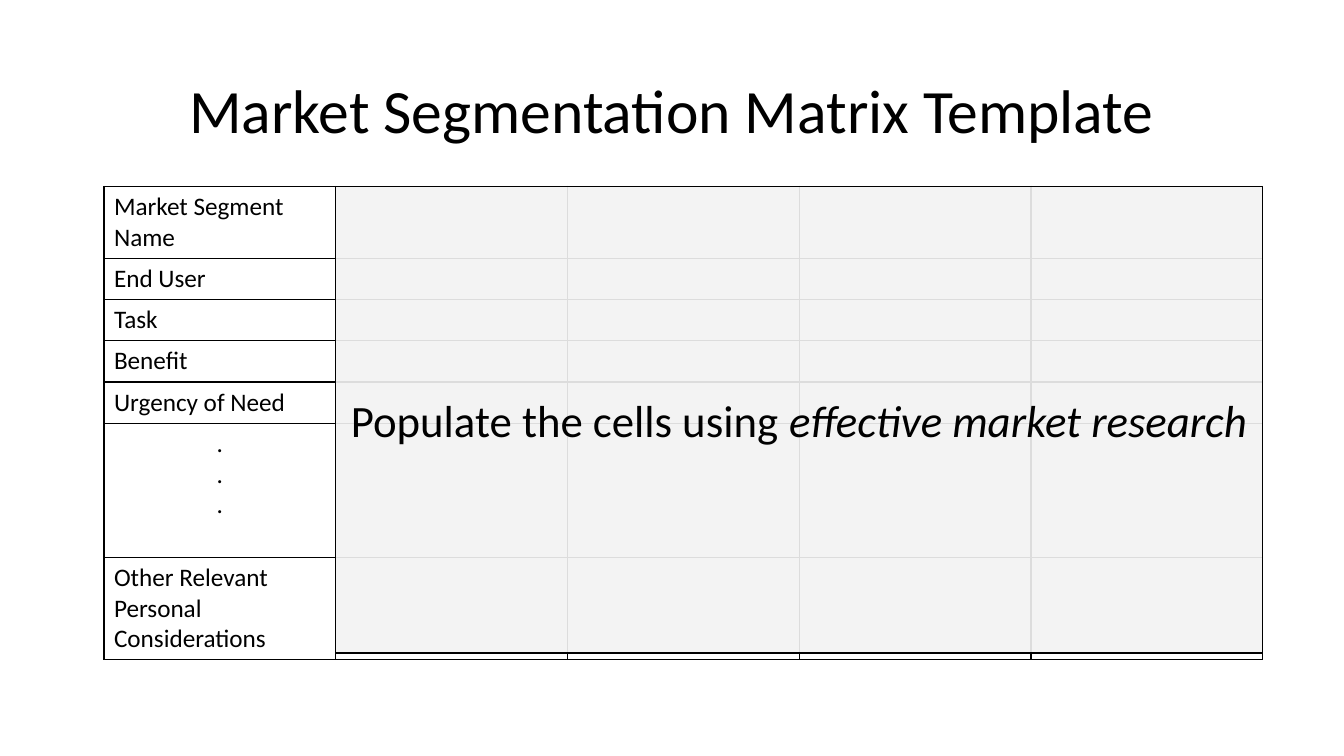
from lxml import etree
from pptx import Presentation
from pptx.dml.color import RGBColor
from pptx.enum.shapes import MSO_SHAPE
from pptx.enum.text import MSO_ANCHOR, PP_ALIGN
from pptx.oxml import parse_xml
from pptx.oxml.ns import nsdecls, qn
from pptx.util import Cm, Pt

COLORS = {"ink": "000000", "paper": "FFFFFF", "veil": "F2F2F2"}
FONT = "Calibri"
LEFT, TOP, COL_W = 2.62, 4.7, 5.84
COLS = 5
ROWS = [  # label, height in cm
    ("Market Segment Name", 1.8),
    ("End User", 1.04),
    ("Task", 1.04),
    ("Benefit", 1.04),
    ("Urgency of Need", 1.04),
    (".\n.\n.", 3.38),
    ("Other Relevant Personal Considerations", 2.58),
]


def style(p, size, align):
    p.alignment = align
    p.font.size = Pt(size)
    p.font.name = FONT
    p.font.bold = False
    p.font.color.rgb = RGBColor.from_string(COLORS["ink"])


def format_cell(cell):
    """Give the cell a plain fill and a thin line on all four sides."""
    tc_pr = cell._tc.get_or_add_tcPr()
    for side in ("lnL", "lnR", "lnT", "lnB"):
        tc_pr.append(parse_xml(
            f'<a:{side} {nsdecls("a")} w="12700"><a:solidFill>'
            f'<a:srgbClr val="{COLORS["ink"]}"/></a:solidFill></a:{side}>'))
    cell.fill.solid()
    cell.fill.fore_color.rgb = RGBColor.from_string(COLORS["paper"])


prs = Presentation()
prs.slide_width, prs.slide_height = Cm(33.87), Cm(19.05)
slide = prs.slides.add_slide(prs.slide_layouts[5])

# Title
title = slide.shapes.title
title.left, title.top, title.width, title.height = Cm(2.33), Cm(1.02), Cm(29.21), Cm(3.68)
tf = title.text_frame
tf.text = "Market Segmentation Matrix Template"
tf.vertical_anchor = MSO_ANCHOR.MIDDLE
p = tf.paragraphs[0]
style(p, 44, PP_ALIGN.CENTER)
p.line_spacing = 0.9

# Segmentation matrix
height = sum(h for _, h in ROWS)
table = slide.shapes.add_table(len(ROWS), COLS, Cm(LEFT), Cm(TOP),
                               Cm(COLS * COL_W), Cm(height)).table
table.first_row = table.horz_banding = False
for col in table.columns:
    col.width = Cm(COL_W)
for row, (label, row_h) in zip(table.rows, ROWS):
    row.height = Cm(row_h)
    for cell in row.cells:
        format_cell(cell)
        style(cell.text_frame.paragraphs[0], 18, PP_ALIGN.LEFT)
    tf = row.cells[0].text_frame
    tf.text = label
    for p in tf.paragraphs:
        style(p, 18, PP_ALIGN.CENTER if label.startswith(".") else PP_ALIGN.LEFT)

# Translucent panel over the empty cells
panel = slide.shapes.add_shape(MSO_SHAPE.RECTANGLE, Cm(LEFT + COL_W), Cm(TOP),
                               Cm((COLS - 1) * COL_W), Cm(11.76))
panel.shadow.inherit = False
panel.fill.solid()
panel.fill.fore_color.rgb = RGBColor.from_string(COLORS["veil"])
veil = panel.fill._xPr.find(qn("a:solidFill"))[0]
etree.SubElement(veil, qn("a:alpha"), val="91000")
panel.line.color.rgb = RGBColor.from_string(COLORS["ink"])
panel.line.width = Pt(1)
tf = panel.text_frame
tf.word_wrap = True
tf.vertical_anchor = MSO_ANCHOR.MIDDLE
p = tf.paragraphs[0]
style(p, 32, PP_ALIGN.CENTER)
p.add_run().text = "Populate the cells using "
r = p.add_run()
r.text = "effective market research"
r.font.italic = True

prs.save("out.pptx")
